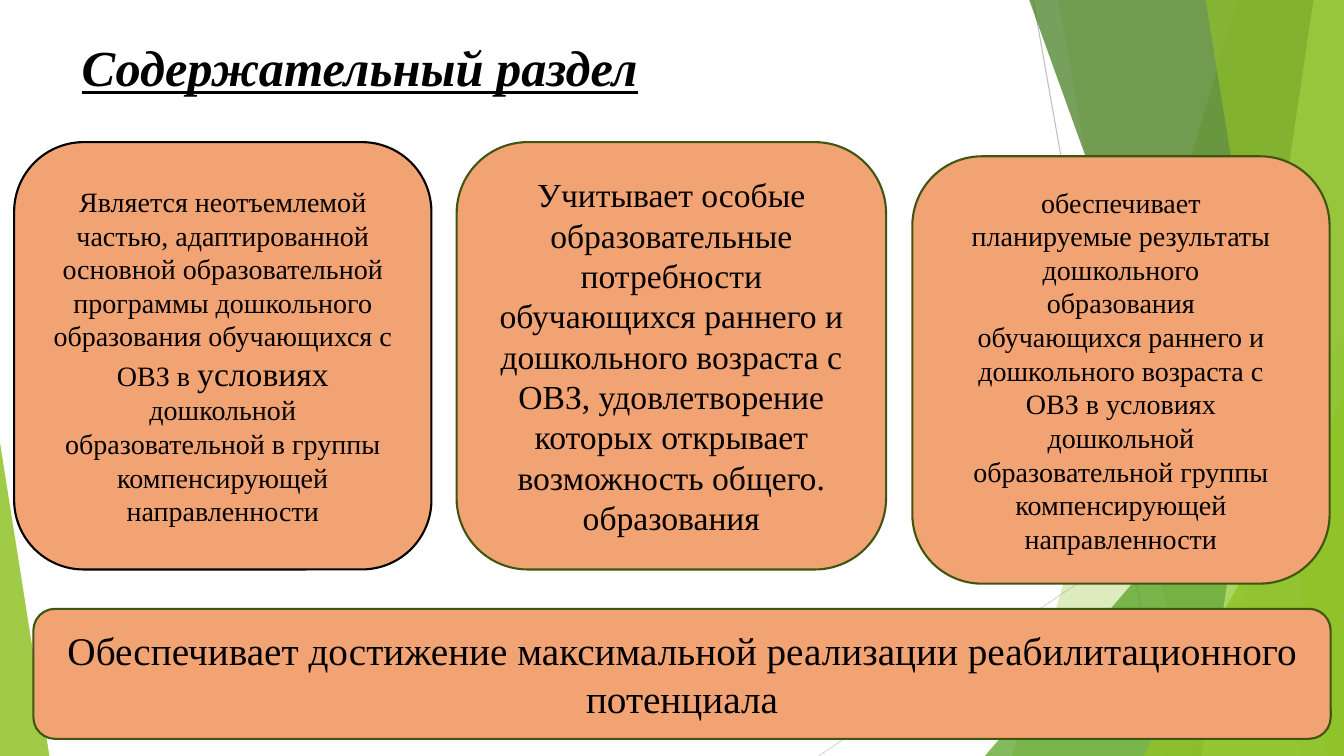
from lxml import etree
from pptx import Presentation
from pptx import util as u
from pptx.dml.color import RGBColor
from pptx.enum import shapes, text
from pptx.oxml.ns import qn

FONT = "Times New Roman"
PEACH, OLIVE, BLACK = "F1A374", "3F5511", "000000"
LIME, PALE, GREEN, DARK = "90C226", "C0E474", "54A021", "3F7819"
WIDTH, HEIGHT = u.Inches(13.33), u.Inches(7.5)

# Each ribbon: x at the top edge, x at the bottom edge, colour, opacity
RIBBONS_BACK = [(92.1, 75.3, LIME, 30), (78.75, 88.73, LIME, 20)]
RIBBONS_FRONT = [(76.58, 96.83, DARK, 70), (97.73, 89.4, PALE, 70),
                 (89.7, 98.85, LIME, 65)]

NEED = ["Является неотъемлемой", "частью, адаптированной",
        "основной образовательной", "программы дошкольного",
        "образования обучающихся с", "ОВЗ в |условиях| дошкольной",
        "образовательной в группы", "компенсирующей", "направленности"]
SPECIAL = ["Учитывает особые", "образовательные", "потребности",
           "обучающихся раннего и", "дошкольного возраста с",
           "ОВЗ, удовлетворение", "которых открывает",
           "возможность общего.", "образования"]
RESULTS = ["обеспечивает", "планируемые результаты", "дошкольного",
           "образования", "обучающихся раннего и", "дошкольного возраста с",
           "ОВЗ в условиях", "дошкольной", "образовательной группы",
           "компенсирующей", "направленности"]
GOAL = ["Обеспечивает достижение максимальной реализации реабилитационного",
        "потенциала"]


def px(share):
    return round(WIDTH * share / 100)


def py(share):
    return round(HEIGHT * share / 100)


def box(x, y, w, h):
    """Turn percentages of the slide into left, top, width, height."""
    return px(x), py(y), px(w), py(h)


def rgb(colour):
    return RGBColor.from_string(colour)


def paint(sp, colour, opacity=100):
    sp.shadow.inherit = False
    sp.fill.solid()
    sp.fill.fore_color.rgb = rgb(colour)
    if opacity < 100:
        clr = sp.fill._xPr.find(qn("a:solidFill"))[0]
        etree.SubElement(clr, qn("a:alpha")).set("val", str(opacity * 1000))


def add_ribbon(s, top, bottom, colour, opacity):
    """Add a band that runs from a slanted left side to the slide's right edge."""
    builder = s.shapes.build_freeform(px(top), 0)
    builder.add_line_segments([(WIDTH, 0), (WIDTH, HEIGHT), (px(bottom), HEIGHT)])
    sp = builder.convert_to_shape()
    paint(sp, colour, opacity)
    sp.line.fill.background()


def add_corner(s, x, y, w, apex, colour, opacity):
    """Add a triangle that stands on the slide's bottom edge."""
    sp = s.shapes.add_shape(shapes.MSO_SHAPE.ISOSCELES_TRIANGLE,
                            *box(x, y, w, 100 - y))
    sp.adjustments[0] = apex
    paint(sp, colour, opacity)
    sp.line.fill.background()


def add_hairline(s, x1, y1, x2, y2, colour):
    line = s.shapes.add_connector(shapes.MSO_CONNECTOR.STRAIGHT,
                                  px(x1), py(y1), px(x2), py(y2))
    line.line.color.rgb = rgb(colour)
    line.line.width = u.Pt(0.75)
    etree.SubElement(line._element.spPr, qn("a:effectLst"))


def add_decor(s):
    add_hairline(s, 76.88, 0, 86.85, 100, "BFBFBF")
    add_hairline(s, 100, 53.73, 60.9, 100, "D9D9D9")
    for ribbon in RIBBONS_BACK:
        add_ribbon(s, *ribbon)
    add_corner(s, 73.28, 44.4, 26.72, 1, GREEN, 72)
    for ribbon in RIBBONS_FRONT:
        add_ribbon(s, *ribbon)
    add_corner(s, 85.05, 52.4, 14.95, 1, LIME, 80)
    add_corner(s, 0, 58.53, 3.68, 0, LIME, 85)


def set_title(s, wording):
    sp = s.shapes.title
    sp.left, sp.top, sp.width, sp.height = box(5.33, 4.13, 70.5, 19.2)
    tf = sp.text_frame
    tf.text = wording
    tf.vertical_anchor = text.MSO_ANCHOR.TOP
    p = tf.paragraphs[0]
    p.alignment = text.PP_ALIGN.LEFT
    p.font.name, p.font.size = FONT, u.Pt(36)
    p.font.bold = p.font.italic = p.font.underline = True
    p.font.color.rgb = rgb(BLACK)


def add_card(s, place, lines, size, outline=OLIVE):
    """Add a rounded card; words between bars in a line are 4 pt larger."""
    sp = s.shapes.add_shape(shapes.MSO_SHAPE.ROUNDED_RECTANGLE, *box(*place))
    paint(sp, PEACH)
    sp.line.color.rgb = rgb(outline)
    sp.line.width = u.Pt(1.5)
    tf = sp.text_frame
    tf.word_wrap = True
    tf.vertical_anchor = text.MSO_ANCHOR.MIDDLE
    for i, line in enumerate(lines):
        p = tf.add_paragraph() if i else tf.paragraphs[0]
        p.alignment = text.PP_ALIGN.CENTER
        p.font.name, p.font.size = FONT, u.Pt(size)
        p.font.color.rgb = rgb(BLACK)
        for j, part in enumerate(line.split("|")):
            r = p.add_run()
            r.text = part
            if j % 2:
                r.font.size = u.Pt(size + 4)


def main():
    prs = Presentation()
    prs.slide_width, prs.slide_height = WIDTH, HEIGHT
    s = prs.slides.add_slide(prs.slide_layouts[5])
    add_decor(s)
    set_title(s, "Содержательный раздел")
    add_card(s, (1.05, 18.8, 31.05, 56.53), NEED, 20, BLACK)
    add_card(s, (33.98, 18.8, 31.95, 56.53), SPECIAL, 24)
    add_card(s, (67.88, 20.67, 31.05, 56.53), RESULTS, 20)
    add_card(s, (2.48, 80.53, 96.53, 17.2), GOAL, 28)
    prs.save("out.pptx")


if __name__ == "__main__":
    main()
